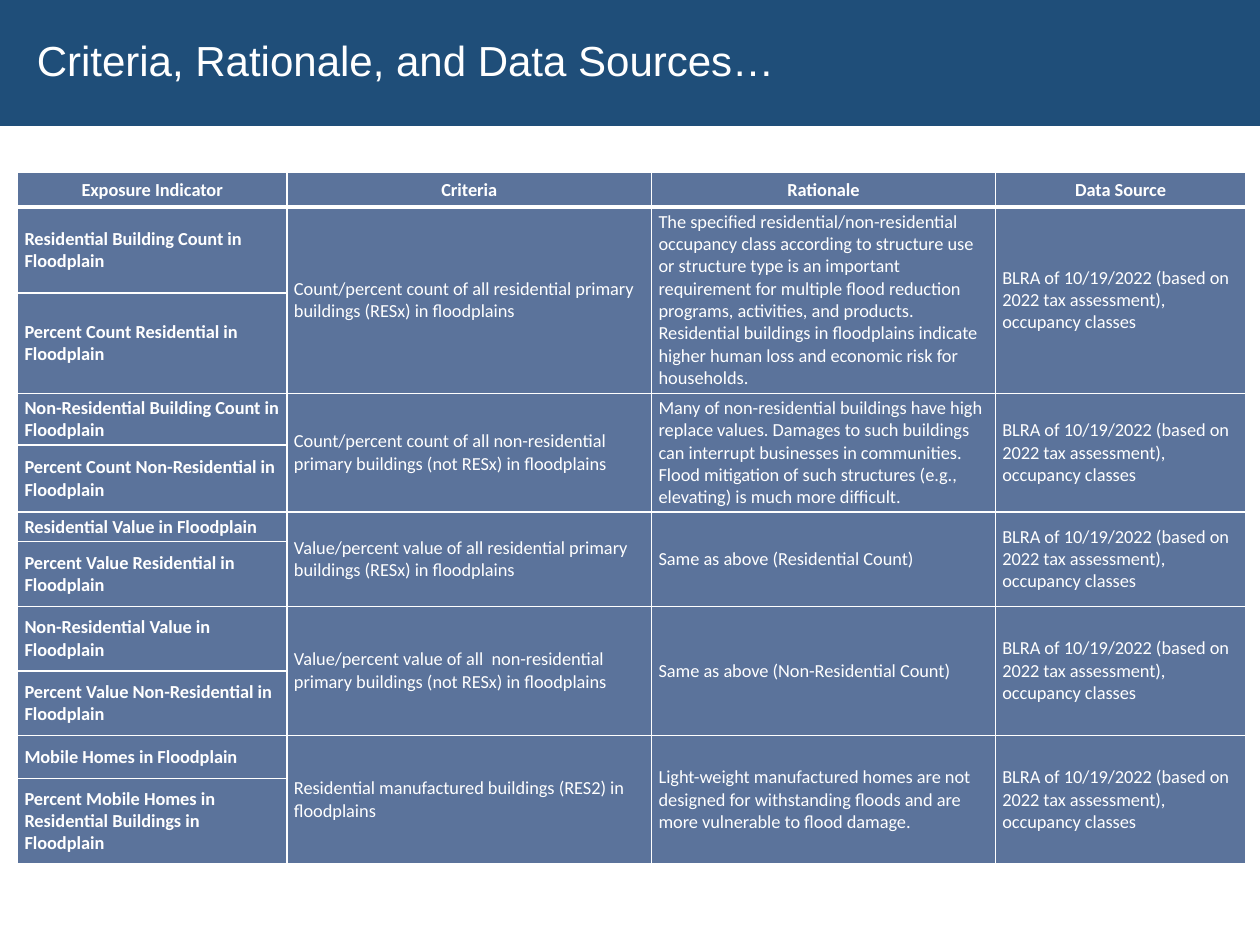
from lxml import etree
from pptx import Presentation
from pptx.dml.color import RGBColor
from pptx.enum.text import MSO_ANCHOR, MSO_AUTO_SIZE, PP_ALIGN
from pptx.oxml.ns import qn
from pptx.util import Pt

MIDDLE = MSO_ANCHOR.MIDDLE
LEFT, CENTER = PP_ALIGN.LEFT, PP_ALIGN.CENTER
TITLE_ONLY = 5

# Content
COLORS = {"banner": "1F4E79", "cell": "5B739B", "white": "FFFFFF"}
TITLE = "Criteria, Rationale, and Data Sources…"
HEADERS = ["Exposure Indicator", "Criteria", "Rationale", "Data Source"]
DATA_SOURCE = "BLRA of 10/19/2022 (based on 2022 tax assessment), occupancy classes"
# Each group: two indicators, then the criteria and rationale they share
GROUPS = [
    ("Residential Building Count in Floodplain",
     "Percent Count Residential in Floodplain",
     "Count/percent count of all residential primary buildings (RESx) in floodplains",
     "The specified residential/non-residential occupancy class according to "
     "structure use or structure type is an important requirement for multiple "
     "flood reduction programs, activities, and products. Residential buildings "
     "in floodplains indicate higher human loss and economic risk for households."),
    ("Non-Residential Building Count in Floodplain",
     "Percent Count Non-Residential in Floodplain",
     "Count/percent count of all non-residential primary buildings (not RESx) in floodplains",
     "Many of non-residential buildings have high replace values. Damages to such "
     "buildings can interrupt businesses in communities. Flood mitigation of such "
     "structures (e.g., elevating) is much more difficult."),
    ("Residential Value in Floodplain",
     "Percent Value Residential in Floodplain",
     "Value/percent value of all residential primary buildings (RESx) in floodplains",
     "Same as above (Residential Count)"),
    ("Non-Residential Value in Floodplain",
     "Percent Value Non-Residential in Floodplain",
     "Value/percent value of all  non-residential primary buildings (not RESx) in floodplains",
     "Same as above (Non-Residential Count)"),
    ("Mobile Homes in Floodplain",
     "Percent Mobile Homes in Residential Buildings in Floodplain",
     "Residential manufactured buildings (RES2) in floodplains",
     "Light-weight manufactured homes are not designed for withstanding floods "
     "and are more vulnerable to flood damage."),
]

# Layout in points
SLIDE_WIDTH, SLIDE_HEIGHT, BANNER_HEIGHT = 720, 540, 72
TABLE_LEFT, TABLE_TOP = 10, 98.6
COLUMN_WIDTHS = [154, 208.4, 196.4, 143.2]
ROW_HEIGHTS = [19.7, 49.1, 57.4, 29.7, 38.3, 16.8, 37, 37, 36.7, 24.6, 49.1]
THIN, THICK = 1, 2.25


def color(name):
    return RGBColor.from_string(COLORS[name])


def add_borders(cell, top, bottom):
    properties = cell._tc.get_or_add_tcPr()
    for side, width in (("L", THIN), ("R", THIN), ("T", top), ("B", bottom)):
        line = etree.SubElement(properties, qn(f"a:ln{side}"), w=str(Pt(width)))
        fill = etree.SubElement(line, qn("a:solidFill"))
        etree.SubElement(fill, qn("a:srgbClr"), val=COLORS["white"])


def write_cell(cell, text, bold=False, align=LEFT):
    cell.text = text
    paragraph = cell.text_frame.paragraphs[0]
    paragraph.alignment = align
    font = paragraph.font
    font.name, font.size, font.bold = "Calibri", Pt(10.5), bold
    font.color.rgb = color("white")


presentation = Presentation()
presentation.slide_width = Pt(SLIDE_WIDTH)
presentation.slide_height = Pt(SLIDE_HEIGHT)
slide = presentation.slides.add_slide(presentation.slide_layouts[TITLE_ONLY])

# Title banner
title = slide.shapes.title
title.left, title.top = Pt(0), Pt(0)
title.width, title.height = Pt(SLIDE_WIDTH), Pt(BANNER_HEIGHT)
title.fill.solid()
title.fill.fore_color.rgb = color("banner")
frame = title.text_frame
frame.text = TITLE
frame.auto_size = MSO_AUTO_SIZE.NONE
frame.vertical_anchor = MIDDLE
frame.margin_left = Pt(21)
paragraph = frame.paragraphs[0]
paragraph.alignment = LEFT
paragraph.line_spacing = 0.9
paragraph.font.name, paragraph.font.size = "Arial", Pt(24)
paragraph.font.color.rgb = color("white")

# Table grid
table = slide.shapes.add_table(
    len(ROW_HEIGHTS), len(COLUMN_WIDTHS), Pt(TABLE_LEFT), Pt(TABLE_TOP),
    Pt(sum(COLUMN_WIDTHS)), Pt(sum(ROW_HEIGHTS))).table
for column, width in zip(table.columns, COLUMN_WIDTHS):
    column.width = Pt(width)
for index, (row, height) in enumerate(zip(table.rows, ROW_HEIGHTS)):
    row.height = Pt(height)
    for cell in row.cells:
        add_borders(cell, top=THICK if index == 1 else THIN,
                    bottom=THICK if index == 0 else THIN)
        cell.fill.solid()
        cell.fill.fore_color.rgb = color("cell")
        cell.vertical_anchor = MIDDLE
        cell.margin_left = cell.margin_right = Pt(4)
        cell.margin_top = cell.margin_bottom = Pt(2)

# Header row
for index, header in enumerate(HEADERS):
    write_cell(table.cell(0, index), header, bold=True, align=CENTER)

# Two rows per group, with the shared columns merged
for group, (count, percent, criteria, rationale) in enumerate(GROUPS):
    first = 1 + 2 * group
    write_cell(table.cell(first, 0), count, bold=True)
    write_cell(table.cell(first + 1, 0), percent, bold=True)
    for index, text in enumerate((criteria, rationale, DATA_SOURCE), start=1):
        table.cell(first, index).merge(table.cell(first + 1, index))
        write_cell(table.cell(first, index), text)

presentation.save("out.pptx")
